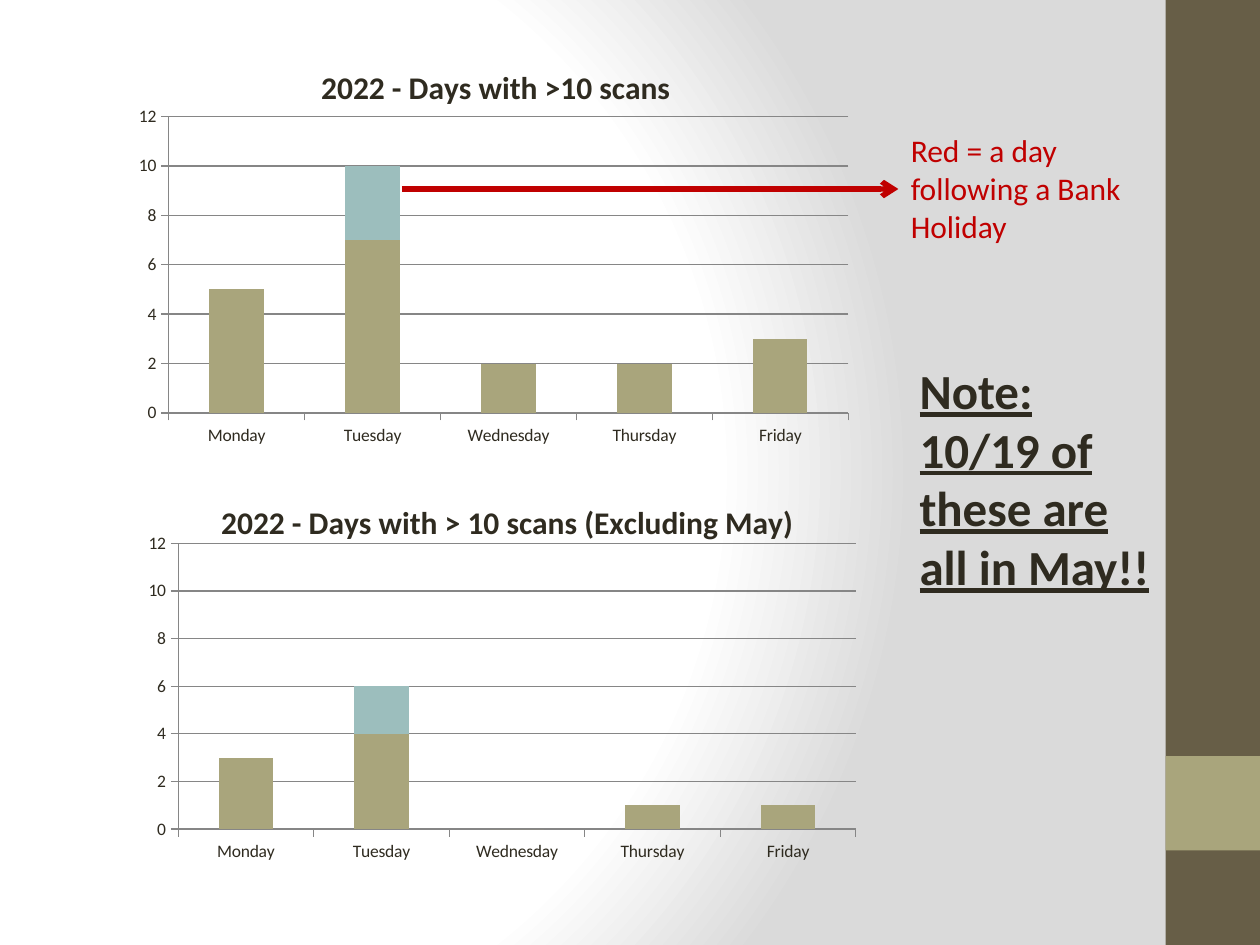
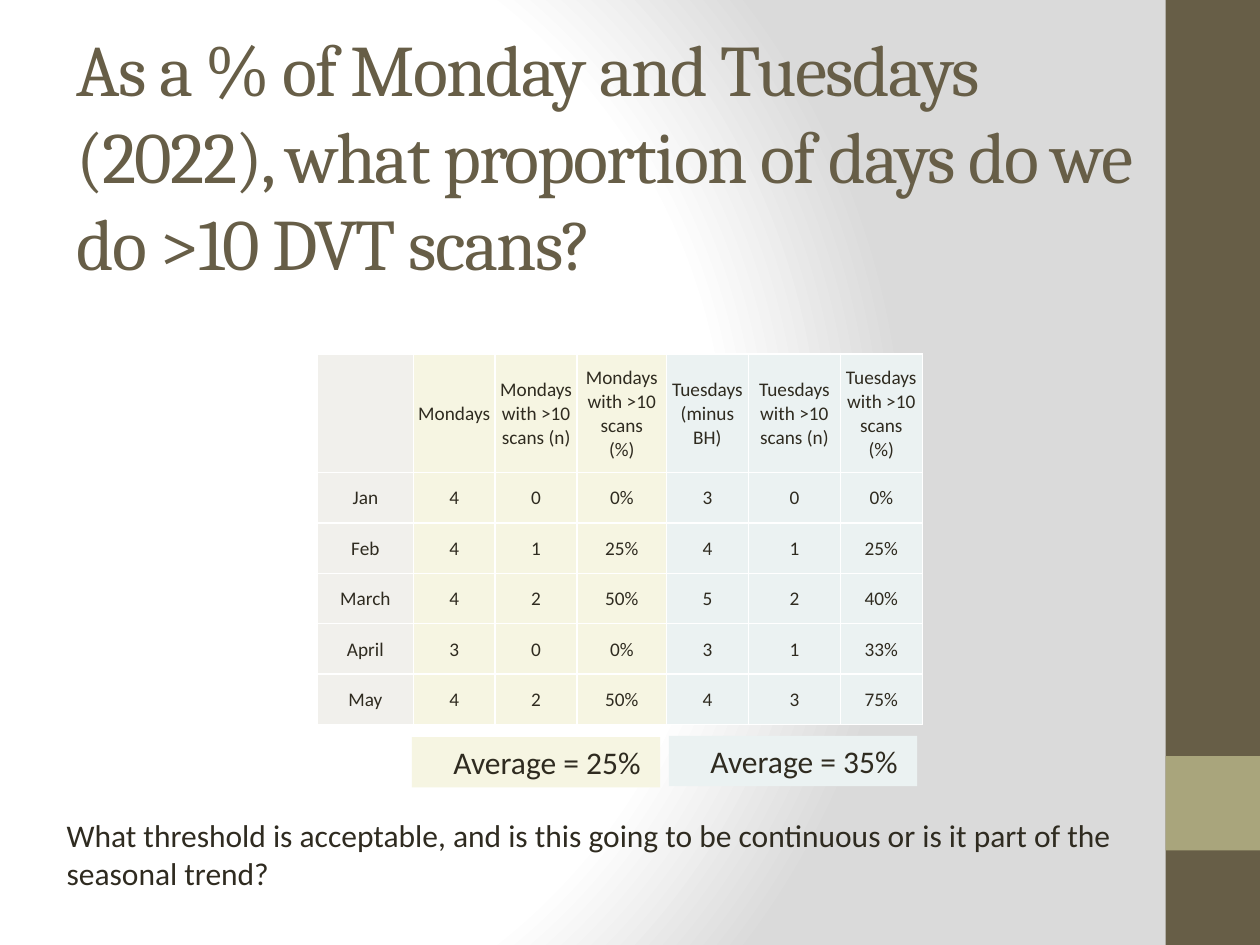
from dataclasses import dataclass

import pptx
import pptx.chart.data
import pptx.dml.color
import pptx.enum.chart
import pptx.enum.shapes
import pptx.enum.text
import pptx.oxml
import pptx.oxml.ns
import pptx.util
from pptx.util import Inches

COLORS = {
    "ink": "2F2B20",
    "olive": "675E47",
    "khaki": "A9A57C",
    "teal": "9CBEBD",
    "red": "C00000",
    "axis": "868686",
    "white": "FFFFFF",
    "backdrop_edge": "DADADA",
    "month": "F1F0EC",
    "monday": "F6F5E2",
    "tuesday": "EBF2F2",
}
BODY_FONT = "Calibri"
TITLE_FONT = "Cambria"
WEEKDAYS = ["Monday", "Tuesday", "Wednesday", "Thursday", "Friday"]
PP_ALIGN = pptx.enum.text.PP_ALIGN
ANCHOR = pptx.enum.text.MSO_ANCHOR
qn = pptx.oxml.ns.qn


@dataclass(frozen=True)
class Box:
    left: float
    top: float
    width: float
    height: float

    def lengths(self) -> list:
        return [Inches(v) for v in (self.left, self.top, self.width, self.height)]


@dataclass(frozen=True)
class Style:
    size: float = 18
    color: str = "ink"
    font: str = BODY_FONT
    bold: bool = False
    underline: bool = False
    align: PP_ALIGN = PP_ALIGN.LEFT
    spacing: int = 0


@dataclass(frozen=True)
class ScanChart:
    title: str
    title_at: tuple
    overlay: bool
    box: Box
    plot_area: tuple
    ordinary_days: tuple
    after_holiday: tuple


@dataclass(frozen=True)
class Month:
    name: str
    mondays: int
    busy_mondays: int
    tuesdays: int
    busy_tuesdays: int

    def cells(self) -> list:
        return [
            self.name,
            str(self.mondays),
            str(self.busy_mondays),
            f"{self.busy_mondays / self.mondays:.0%}",
            str(self.tuesdays),
            str(self.busy_tuesdays),
            f"{self.busy_tuesdays / self.tuesdays:.0%}",
        ]


@dataclass(frozen=True)
class Average:
    text: str
    box: Box
    color: str


BANDS = [(Box(9.25, 0, 0.75, 7.5), "olive"), (Box(9.25, 6, 0.75, 0.75), "khaki")]
SCAN_CHARTS = [
    ScanChart("2022 - Days with >10 scans", (0.26, 0.1), False,
              Box(0.91, 0.13, 6.13, 3.46), (0.07, 0.23, 0.88, 0.68),
              (5, 7, 2, 2, 3), (None, 3, None, None, None)),
    ScanChart("2022 - Days with > 10 scans (Excluding May)", (0.11, 0.12), True,
              Box(1.06, 3.51, 5.91, 3.49), (0.06, 0.23, 0.91, 0.65),
              (3, 4, 0, 1, 1), (None, 2, None, None, None)),
]
HEADINGS = ["", "Mondays", "Mondays with >10 scans (n)", "Mondays with >10 scans\n(%)",
            "Tuesdays (minus BH)", "Tuesdays with >10 scans (n)", "Tuesdays with >10 scans\n(%)"]
MONTHS = [
    Month("Jan", 4, 0, 3, 0),
    Month("Feb", 4, 1, 4, 1),
    Month("March", 4, 2, 5, 2),
    Month("April", 3, 0, 3, 1),
    Month("May", 4, 2, 4, 3),
]
COLUMN_WIDTHS = [0.76, 0.65, 0.65, 0.71, 0.65, 0.73, 0.65]
COLUMN_COLORS = ["month"] + ["monday"] * 3 + ["tuesday"] * 3
ROW_HEIGHTS = [0.94] + [0.4] * len(MONTHS)
AVERAGES = [
    Average("Average = 25% ", Box(3.27, 5.85, 1.97, 0.4), "monday"),
    Average("Average = 35% ", Box(5.31, 5.84, 1.97, 0.4), "tuesday"),
]


def rgb(name: str) -> pptx.dml.color.RGBColor:
    return pptx.dml.color.RGBColor.from_string(COLORS[name])


def xml(tag: str, attributes: str = "", inner: str = ""):
    namespace = pptx.oxml.ns.nsdecls(tag[0])
    return pptx.oxml.parse_xml(f"<{tag} {namespace} {attributes}>{inner}</{tag}>")


def paint(shape, color: str) -> None:
    shape.fill.solid()
    shape.fill.fore_color.rgb = rgb(color)


def style_font(font, style: Style) -> None:
    font.name = style.font
    font.size = pptx.util.Pt(style.size)
    font.bold = style.bold
    font.underline = style.underline
    font.color.rgb = rgb(style.color)


def write(frame, text: str, style: Style) -> None:
    frame.text = text
    for paragraph in frame.paragraphs:
        paragraph.alignment = style.align
        for run in paragraph.runs:
            style_font(run.font, style)
            if style.spacing:
                run.font._element.set("spc", str(style.spacing))


def add_text(slide, box: Box, text: str, style: Style, anchor=ANCHOR.TOP):
    label = slide.shapes.add_textbox(*box.lengths())
    label.text_frame.word_wrap = True
    label.text_frame.vertical_anchor = anchor
    write(label.text_frame, text, style)
    return label


def add_block(slide, box: Box, color: str):
    block = slide.shapes.add_shape(pptx.enum.shapes.MSO_SHAPE.RECTANGLE, *box.lengths())
    block.shadow.inherit = False
    paint(block, color)
    block.line.fill.background()
    return block


def set_backdrop(master) -> None:
    master.background.fill.gradient()
    gradient = next(master.element.iter(qn("a:gradFill")))
    for part in list(gradient):
        gradient.remove(part)
    stops = [(0, "white"), (75000, "white"), (100000, "backdrop_edge")]
    gradient.append(xml("a:gsLst", inner="".join(
        f'<a:gs pos="{pos}"><a:srgbClr val="{COLORS[color]}"/></a:gs>' for pos, color in stops)))
    gradient.append(xml("a:path", 'path="circle"',
                        '<a:fillToRect l="20000" t="50000" r="100000" b="50000"/>'))


def add_slide(deck):
    slide = deck.slides.add_slide(deck.slide_layouts[6])
    for box, color in BANDS:
        add_block(slide, box, color)
    return slide


def place(part, position: int, fractions: tuple, target: str = "") -> None:
    layout = part.find(qn("c:layout"))
    if layout is not None:
        part.remove(layout)
    values = "".join(f'<c:{key} val="{value}"/>' for key, value in zip("xywh", fractions))
    part.insert(position, xml("c:layout", inner=(
        f'<c:manualLayout>{target}<c:xMode val="edge"/><c:yMode val="edge"/>'
        f"{values}</c:manualLayout>")))


def add_scan_chart(slide, scans: ScanChart) -> None:
    data = pptx.chart.data.CategoryChartData()
    data.categories = WEEKDAYS
    data.add_series("Series 1", scans.ordinary_days)
    data.add_series("Series 2", scans.after_holiday)
    chart = slide.shapes.add_chart(
        pptx.enum.chart.XL_CHART_TYPE.COLUMN_STACKED, *scans.box.lengths(), data).chart
    style_font(chart.font, Style(size=10))
    chart.has_legend = False
    chart.has_title = True
    write(chart.chart_title.text_frame, scans.title, Style(bold=True, align=PP_ALIGN.CENTER))
    title = chart.chart_title._element
    place(title, 1, scans.title_at)
    title.find(qn("c:overlay")).set("val", str(int(scans.overlay)))
    place(chart.element.find(".//" + qn("c:plotArea")), 0, scans.plot_area,
          '<c:layoutTarget val="inner"/>')

    plot = chart.plots[0]
    plot.gap_width = 150
    plot.overlap = 100
    plot.vary_by_categories = False
    for series, color in zip(plot.series, ("khaki", "teal")):
        paint(series.format, color)

    counts, days = chart.value_axis, chart.category_axis
    counts.minimum_scale, counts.maximum_scale, counts.major_unit = 0, 12, 2
    counts.has_major_gridlines = True
    for axis in (counts, days):
        axis.major_tick_mark = pptx.enum.chart.XL_TICK_MARK.OUTSIDE
    for line in (counts.format.line, days.format.line, counts.major_gridlines.format.line):
        line.color.rgb = rgb("axis")
        line.width = pptx.util.Pt(0.75)


def add_arrow(slide, start: tuple, label) -> None:
    x, y = (Inches(v) for v in start)
    arrow = slide.shapes.add_connector(
        pptx.enum.shapes.MSO_CONNECTOR.STRAIGHT, x, y, label.left, y)
    arrow.end_connect(label, 1)
    arrow.line.color.rgb = rgb("red")
    arrow.line.width = pptx.util.Pt(3)
    arrow.line._get_or_add_ln().append(xml("a:tailEnd", 'type="arrow"'))
    arrow._element.spPr.append(xml("a:effectLst"))


def fill_cell(cell, text: str, color: str) -> None:
    write(cell.text_frame, text, Style(size=11, align=PP_ALIGN.CENTER))
    cell.vertical_anchor = ANCHOR.MIDDLE
    cell.margin_left = cell.margin_right = cell.margin_top = Inches(0.01)
    cell.margin_bottom = Inches(0)
    for side in "LRTB":
        cell._tc.get_or_add_tcPr().append(xml(
            f"a:ln{side}", 'w="12700"',
            f'<a:solidFill><a:srgbClr val="{COLORS["white"]}"/></a:solidFill>'))
    paint(cell, color)


def add_month_table(slide) -> None:
    box = Box(2.52, 2.81, sum(COLUMN_WIDTHS), sum(ROW_HEIGHTS))
    table = slide.shapes.add_table(
        len(ROW_HEIGHTS), len(COLUMN_WIDTHS), *box.lengths()).table
    table.first_row = table.horz_banding = False
    for column, width in zip(table.columns, COLUMN_WIDTHS):
        column.width = Inches(width)
    for row, height in zip(table.rows, ROW_HEIGHTS):
        row.height = Inches(height)
    for row, texts in zip(table.rows, [HEADINGS] + [month.cells() for month in MONTHS]):
        for cell, text, color in zip(row.cells, texts, COLUMN_COLORS):
            fill_cell(cell, text, color)


def build_busy_days(deck) -> None:
    slide = add_slide(deck)
    for scans in SCAN_CHARTS:
        add_scan_chart(slide, scans)
    add_text(slide, Box(7.2, 2.81, 2.13, 1.99), "Note: 10/19 of these are all in May!!",
             Style(size=28, bold=True, underline=True))
    holiday_key = add_text(slide, Box(7.13, 0.99, 2.28, 1.02),
                           "Red = a day following a Bank Holiday", Style(color="red"))
    add_arrow(slide, (3.19, 1.5), holiday_key)


def build_proportions(deck) -> None:
    slide = add_slide(deck)
    add_text(slide, Box(0.51, 0.6, 9, 1.25),
             "As a % of Monday and Tuesdays (2022), what proportion of days do we do >10 DVT scans?",
             Style(size=41.4, color="olive", font=TITLE_FONT, spacing=-100), ANCHOR.MIDDLE)
    add_month_table(slide)
    add_text(slide, Box(0.43, 6.43, 8.98, 0.71),
             "What threshold is acceptable, and is this going to be continuous "
             "or is it part of the seasonal trend?", Style())
    for average in AVERAGES:
        block = add_block(slide, average.box, average.color)
        block.text_frame.word_wrap = True
        block.text_frame.vertical_anchor = ANCHOR.TOP
        write(block.text_frame, average.text, Style(align=PP_ALIGN.RIGHT))


def main() -> None:
    deck = pptx.Presentation()
    deck.slide_width, deck.slide_height = Inches(10), Inches(7.5)
    set_backdrop(deck.slide_master)
    build_busy_days(deck)
    build_proportions(deck)
    deck.save("out.pptx")


if __name__ == "__main__":
    main()
